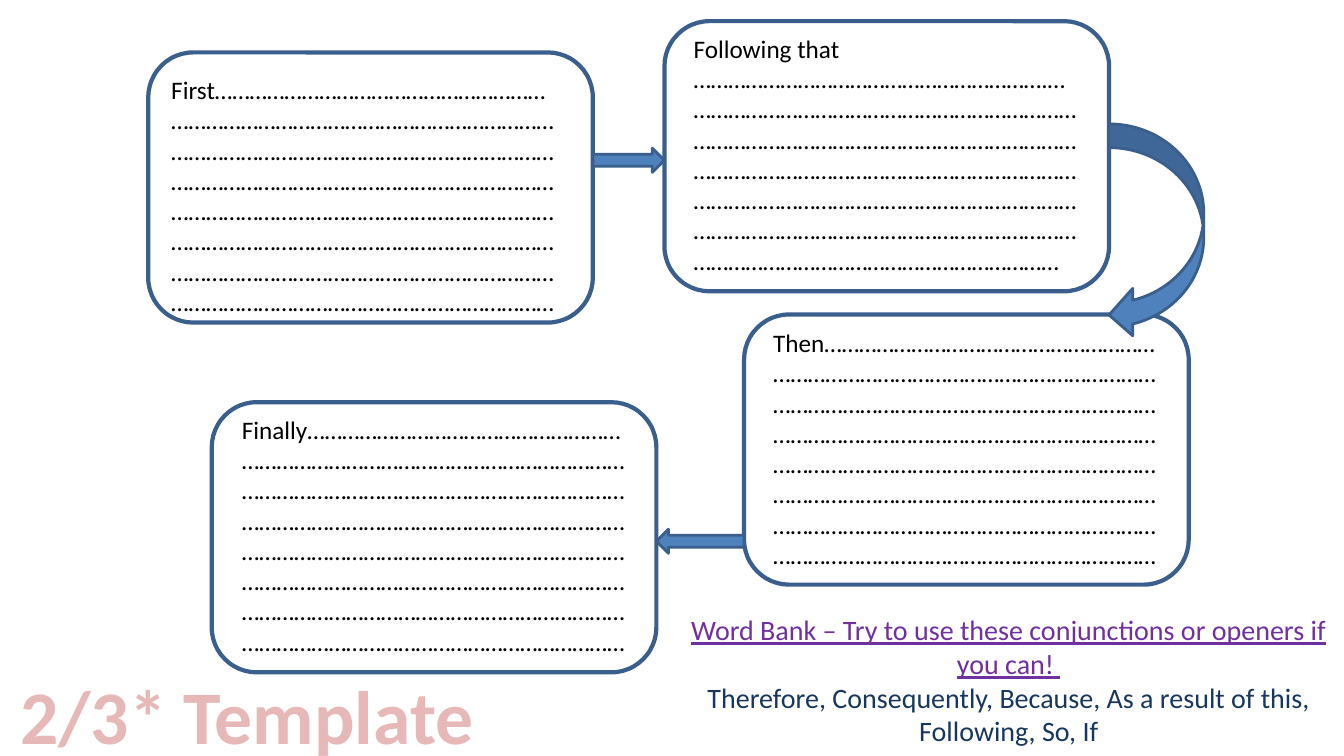
from lxml.etree import SubElement
from pptx import Presentation
from pptx.dml.color import RGBColor
from pptx.enum.shapes import MSO_SHAPE as SHAPE
from pptx.enum.text import MSO_ANCHOR as ANCHOR, MSO_AUTO_SIZE as AUTO, PP_ALIGN as ALIGN
from pptx.oxml.ns import qn
from pptx.util import Inches, Pt

FONT = "Calibri"
WHITE = RGBColor(0xFF, 0xFF, 0xFF)
BLACK = RGBColor(0x00, 0x00, 0x00)
BLUE = RGBColor(0x4F, 0x81, 0xBD)
DARK_BLUE = RGBColor(0x3A, 0x5F, 0x8C)
NAVY = RGBColor(0x17, 0x37, 0x5E)
PURPLE = RGBColor(0x70, 0x30, 0xA0)
PINK = RGBColor(0xE6, 0xB9, 0xB8)
RED = RGBColor(0xC0, 0x50, 0x4D)

CARD_W, CARD_H = 4.41, 2.68
NOTE_W, NOTE_H = 4.02, 2.52
DOTS_PER_LINE = 22


def dots(first, full_lines):
    """Writing lines: a part line followed by full ones."""
    return "…" * (first + full_lines * DOTS_PER_LINE)


# Card left and top, text left and top, text
STEPS = [
    (1.47, 0.52, 1.60, 0.69, "First" + dots(19, 7)),
    (6.59, 0.21, 6.78, 0.28, "Following that " + dots(20, 0) + "." + dots(22, 5)),
    (7.38, 3.12, 7.57, 3.20, "Then" + dots(19, 7)),
    (2.10, 3.99, 2.30, 4.06, "Finally" + dots(18, 7)),
]

ARROWS = [
    (SHAPE.RIGHT_ARROW, 5.88, 1.47, 0.71, 0.24),
    (SHAPE.CURVED_LEFT_ARROW, 11, 1.23, 0.94, 2.13),
    (SHAPE.LEFT_ARROW, 6.51, 5.25, 0.87, 0.24),
]


def add_block(s, kind, x, y, w, h, fill, line_width):
    sp = s.shapes.add_shape(kind, Inches(x), Inches(y), Inches(w), Inches(h))
    sp.shadow.inherit = False
    sp.fill.solid()
    sp.fill.fore_color.rgb = fill
    sp.line.color.rgb = DARK_BLUE
    sp.line.width = Pt(line_width)


def add_run(p, text, size=18, color=BLACK, bold=False, underline=False, outline=None):
    r = p.add_run()
    r.text = text
    r.font.name = FONT
    r.font.size = Pt(size)
    r.font.bold = bold
    r.font.underline = underline
    r.font.color.rgb = color
    if outline:
        line_color, width = outline
        props = r.font._element
        ln = SubElement(props, qn("a:ln"), w=str(Pt(width)))
        fill = SubElement(ln, qn("a:solidFill"))
        SubElement(fill, qn("a:srgbClr"), val=str(line_color))
        props.insert(0, ln)  # the outline comes before the fill


def add_text_box(s, x, y, w, h, align=ALIGN.LEFT):
    tf = s.shapes.add_textbox(Inches(x), Inches(y), Inches(w), Inches(h)).text_frame
    tf.word_wrap = True
    tf.auto_size = AUTO.SHAPE_TO_FIT_TEXT
    p = tf.paragraphs[0]
    p.alignment = align
    return p


def set_title(s, text):
    sp = s.shapes.title
    sp.left, sp.top = Inches(0), Inches(6.59)
    sp.width, sp.height = Inches(4.9), Inches(1.01)
    tf = sp.text_frame
    tf.word_wrap = True
    tf.auto_size = AUTO.SHAPE_TO_FIT_TEXT
    tf.vertical_anchor = ANCHOR.TOP
    p = tf.paragraphs[0]
    p.alignment = ALIGN.CENTER
    add_run(p, text, size=54, color=PINK, bold=True, outline=(RED, 1.75))


def add_word_bank(s):
    p = add_text_box(s, 6.67, 6.03, 6.67, 1.45, ALIGN.CENTER)
    outline = (BLUE, 0.8)
    add_run(p, "Word Bank – Try to use these conjunctions or openers if you can! ",
            size=20, color=PURPLE, underline=True, outline=outline)
    p.add_line_break()
    add_run(p, "Therefore, Consequently, Because, As a result of this, Following, So, If",
            size=20, color=NAVY, outline=outline)


def main():
    prs = Presentation()
    prs.slide_width, prs.slide_height = Inches(13.33), Inches(7.5)
    s = prs.slides.add_slide(prs.slide_layouts[5])
    set_title(s, "2/3* Template")

    # Cards, then the arrows that link them
    for x, y, *_ in STEPS:
        add_block(s, SHAPE.ROUNDED_RECTANGLE, x, y, CARD_W, CARD_H, WHITE, 3)
    for kind, x, y, w, h in ARROWS:
        add_block(s, kind, x, y, w, h, BLUE, 2)

    # Sentence openers with writing lines
    for _, _, x, y, text in STEPS:
        add_run(add_text_box(s, x, y, NOTE_W, NOTE_H), text)

    add_word_bank(s)
    prs.save("out.pptx")


if __name__ == "__main__":
    main()
